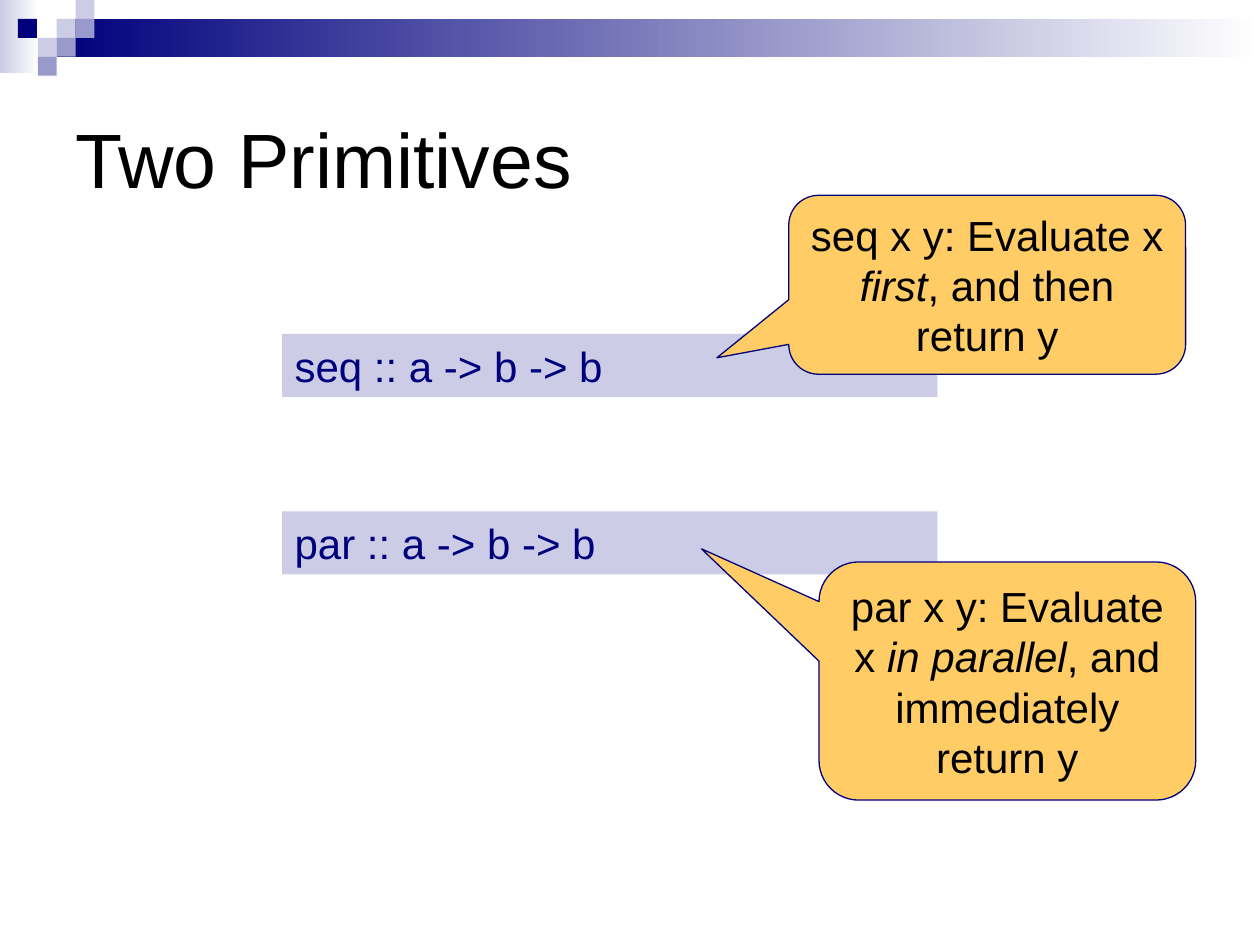
from pptx import Presentation
from pptx.dml.color import RGBColor
from pptx.enum.shapes import MSO_SHAPE as Shape
from pptx.enum.text import MSO_ANCHOR as Anchor, PP_ALIGN as Align
from pptx.util import Inches, Pt

NAVY, LILAC, MID, GOLD = "00007D", "CCCCE6", "9999CC", "FFCC66"
CELL = 0.15

rgb = RGBColor.from_string


def add(kind, left, top, width, height, *fill):
    """Add a flat shape; two fill colours make a left-to-right gradient."""
    shape = slide.shapes.add_shape(kind, *map(Inches, (left, top, width, height)))
    shape.shadow.inherit = False
    shape.line.fill.background()
    if len(fill) == 2:
        shape.fill.gradient()
        shape.fill.gradient_angle = 0
        for stop, tone in zip(shape.fill.gradient_stops, fill):
            stop.color.rgb = rgb(tone)
    else:
        shape.fill.solid()
        shape.fill.fore_color.rgb = rgb(fill[0])
    return shape


def style(para, size, tone, align):
    para.alignment = align
    para.font.name = "Arial"
    para.font.size = Pt(size)
    para.font.color.rgb = rgb(tone)


deck = Presentation()
deck.slide_width, deck.slide_height = Inches(10), Inches(7.5)
slide = deck.slides.add_slide(deck.slide_layouts[5])

# Header band and its mosaic of square cells
add(Shape.RECTANGLE, 0, 0, 0.31, 0.58, LILAC, "FFFFFF")
add(Shape.RECTANGLE, 3 * CELL, CELL, 10 - 3 * CELL, 2 * CELL, NAVY, "FFFFFF")
for col, row, tone in [
    (3, 1, LILAC), (4, 0, LILAC), (4, 1, MID), (2, 2, LILAC),
    (0.95, 1, NAVY), (3, 2, MID), (2, 3, MID),
]:
    add(Shape.RECTANGLE, col * CELL, row * CELL, CELL, CELL, tone)

title = slide.shapes.title
title.left, title.top, title.width, title.height = map(Inches, (0.5, 0.5, 9, 1.5))
title.text_frame.text = "Two Primitives"
title.text_frame.vertical_anchor = Anchor.MIDDLE
style(title.text_frame.paragraphs[0], 44, "000000", Align.LEFT)

# Type signatures
for top, code in [(2.65, "seq :: a -> b -> b"), (4.06, "par :: a -> b -> b")]:
    bar = add(Shape.RECTANGLE, 2.24, top, 5.2, 0.5, LILAC)
    bar.text_frame.text = code
    bar.text_frame.vertical_anchor = Anchor.TOP
    style(bar.text_frame.paragraphs[0], 24, NAVY, Align.LEFT)

# Callouts: box, pointer tip, then plain, italic and plain text
for box, tip, parts in [
    ((6.26, 1.55, 3.15, 1.42), (-0.681, 0.408),
     ("seq x y: Evaluate x ", "first", ", and then return y")),
    ((6.5, 4.46, 2.99, 1.89), (-0.812, -0.555),
     ("par x y: Evaluate x ", "in parallel", ", and immediately return y")),
]:
    note = add(Shape.ROUNDED_RECTANGULAR_CALLOUT, *box, GOLD)
    note.adjustments[0], note.adjustments[1] = tip
    note.line.color.rgb = rgb(NAVY)
    note.line.width = Pt(0.75)
    note.text_frame.vertical_anchor = Anchor.MIDDLE
    para = note.text_frame.paragraphs[0]
    style(para, 24, "000000", Align.CENTER)
    for part in parts:
        run = para.add_run()
        run.text = part
        if part == parts[1]:
            run.font.italic = True

deck.save("out.pptx")
